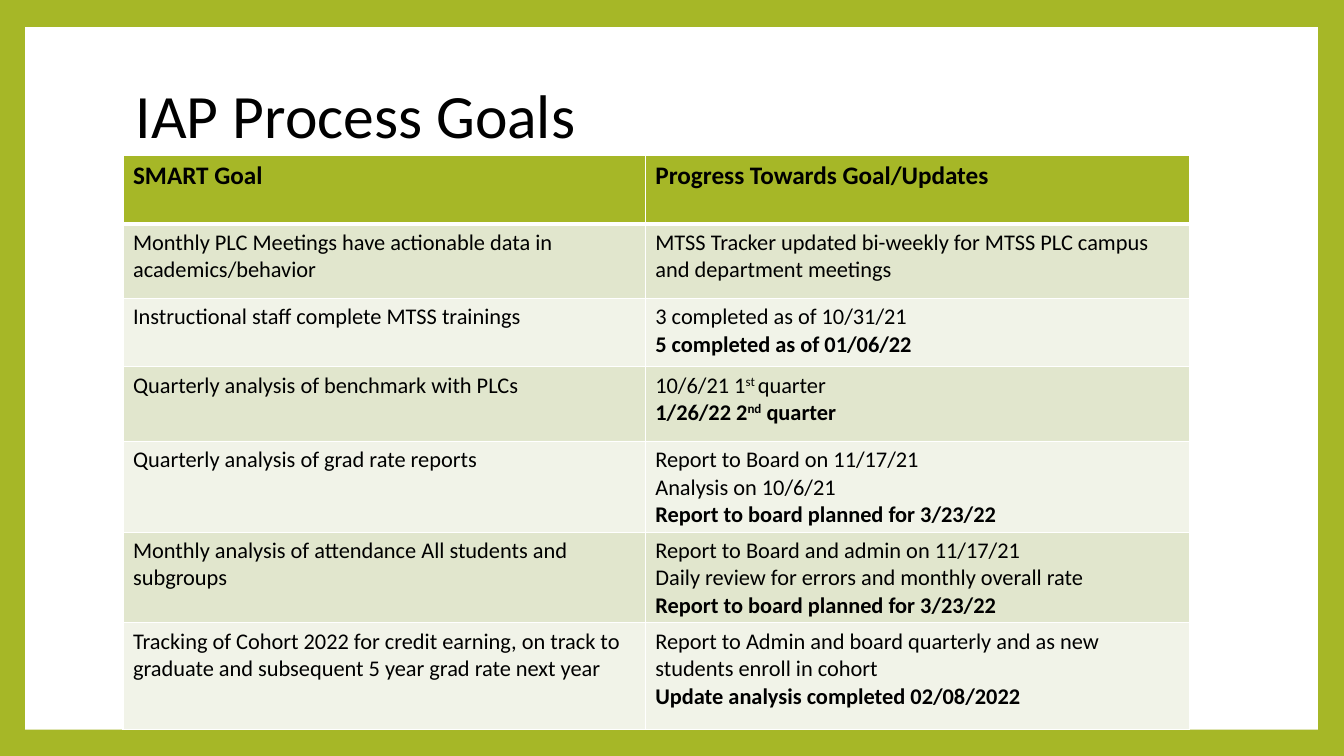
from lxml.etree import SubElement as Sub
from pptx import Presentation
from pptx.dml.color import RGBColor as Rgb
from pptx.enum.shapes import MSO_SHAPE as Shape
from pptx.enum.text import MSO_ANCHOR as Anchor
from pptx.oxml.ns import qn
from pptx.util import Inches, Pt

HUES = {"green": "A6B727", "white": "FFFFFF", "black": "000000",
        "dark": "E1E6CD", "light": "F1F3E8"}
COLS = [5.18, 5.4]
TALL = [0.68, 0.74, 0.68, 0.74, 0.89, 0.89, 1.06]
HEAD = ["SMART Goal", "Progress Towards Goal/Updates"]
GOALS = [
    ("Monthly PLC Meetings have actionable data in academics/behavior",
     ["MTSS Tracker updated bi-weekly for MTSS PLC campus and department meetings"], ""),
    ("Instructional staff complete MTSS trainings",
     ["3 completed as of 10/31/21"], "5 completed as of 01/06/22"),
    ("Quarterly analysis of benchmark with PLCs",
     ["10/6/21 1^st ^quarter"], "1/26/22 2^nd^ quarter"),
    ("Quarterly analysis of grad rate reports",
     ["Report to Board on 11/17/21", "Analysis on 10/6/21"],
     "Report to board planned for 3/23/22"),
    ("Monthly analysis of attendance All students and subgroups",
     ["Report to Board and admin on 11/17/21",
      "Daily review for errors and monthly overall rate"],
     "Report to board planned for 3/23/22"),
    ("Tracking of Cohort 2022 for credit earning, on track to graduate "
     "and subsequent 5 year grad rate next year",
     ["Report to Admin and board quarterly and as new students enroll in cohort"],
     "Update analysis completed 02/08/2022"),
]


def hue(name):
    return Rgb.from_string(HUES[name])


def write(par, text, size=16, bold=False, color="black", space=None):
    if space:
        par.line_spacing = space
    for i, part in enumerate(text.split("^")):
        run = par.add_run()
        run.text = part
        font = run.font
        font.name, font.size, font.bold = "Calibri", Pt(size), bold
        font.color.rgb = hue(color)
        if i % 2:
            run._r.get_or_add_rPr().set("baseline", "30000")


def edge(cell, low):
    props = cell._tc.get_or_add_tcPr()
    for side, wide in (("L", 1), ("R", 1), ("T", 1), ("B", low)):
        line = Sub(props, qn(f"a:ln{side}"), w=str(Pt(wide)))
        Sub(Sub(line, qn("a:solidFill")), qn("a:srgbClr"), val=HUES["white"])


def paint(cell, color, low=1):
    edge(cell, low)
    cell.fill.solid()
    cell.fill.fore_color.rgb = hue(color)


def panel(slide, box):
    slide.background.fill.solid()
    slide.background.fill.fore_color.rgb = hue("green")
    card = slide.shapes.add_shape(Shape.RECTANGLE, *map(Inches, box))
    card.shadow.inherit = False
    card.fill.solid()
    card.fill.fore_color.rgb = hue("white")
    card.line.fill.background()


def title(slide, box, text):
    frame = slide.shapes.add_textbox(*map(Inches, box)).text_frame
    frame.word_wrap = True
    frame.vertical_anchor = Anchor.MIDDLE
    write(frame.paragraphs[0], text, size=44, space=0.9)


def goals(slide, left, top):
    box = map(Inches, (left, top, sum(COLS), sum(TALL)))
    grid = slide.shapes.add_table(len(TALL), len(COLS), *box).table
    for col, wide in zip(grid.columns, COLS):
        col.width = Inches(wide)
    for row, tall in zip(grid.rows, TALL):
        row.height = Inches(tall)
    for c, text in enumerate(HEAD):
        cell = grid.cell(0, c)
        paint(cell, "green", low=3)
        write(cell.text_frame.paragraphs[0], text, size=18, bold=True)
    for r, (goal, notes, last) in enumerate(GOALS, 1):
        lines = [(note, False) for note in notes]
        if last:
            lines.append((last, True))
        for c, items in enumerate(([(goal, False)], lines)):
            cell = grid.cell(r, c)
            paint(cell, "dark" if r % 2 else "light")
            frame = cell.text_frame
            for i, (text, bold) in enumerate(items):
                par = frame.add_paragraph() if i else frame.paragraphs[0]
                write(par, text, bold=bold)


def main():
    deck = Presentation()
    deck.slide_width, deck.slide_height = Inches(13.33), Inches(7.5)
    slide = deck.slides.add_slide(deck.slide_layouts[6])
    panel(slide, (0.25, 0.27, 12.82, 6.97))
    title(slide, (1.25, 0.44, 10.8, 1.48), "IAP Process Goals")
    goals(slide, 1.22, 1.54)
    deck.save("out.pptx")


if __name__ == "__main__":
    main()
